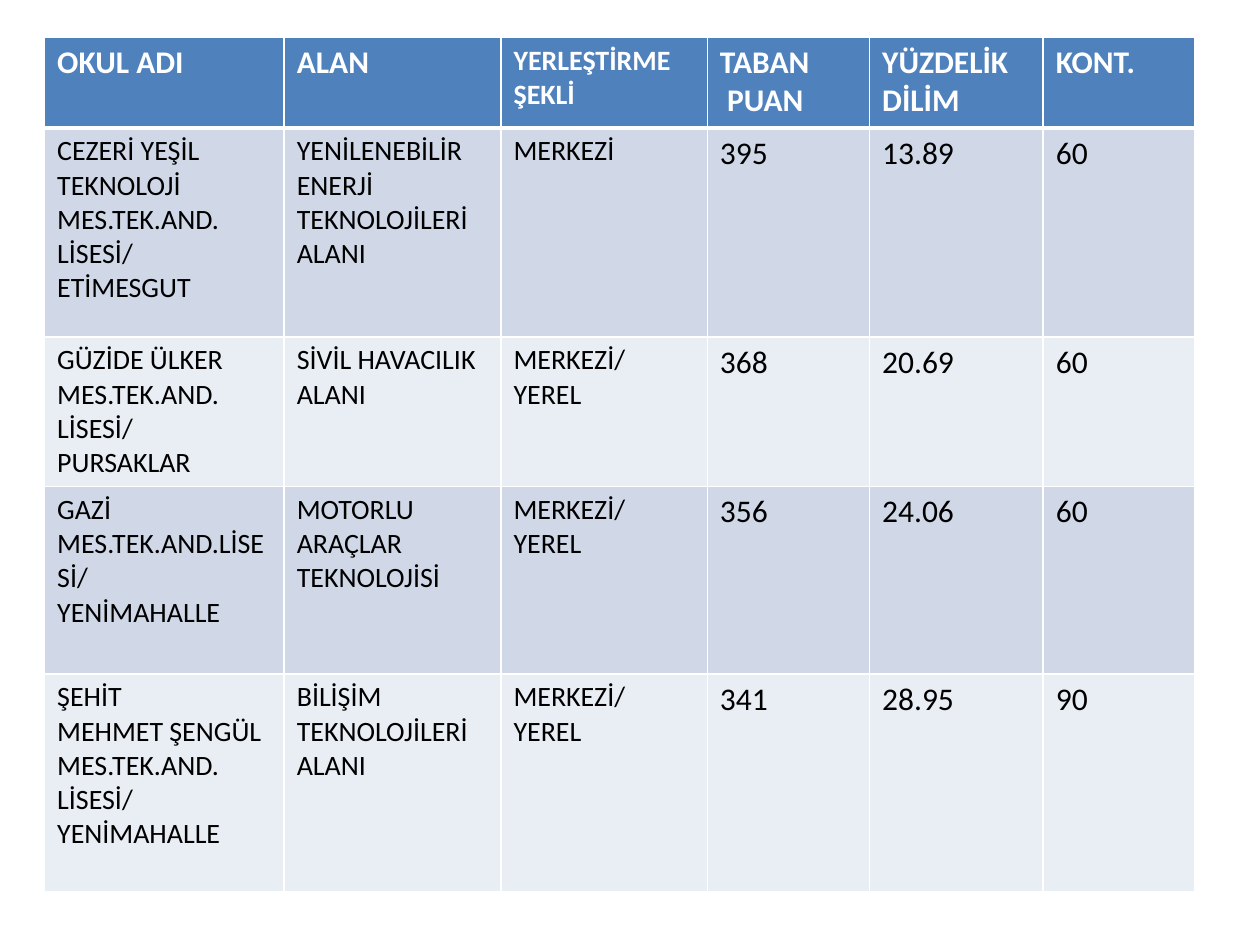
import lxml.etree
import pptx
import pptx.dml.color
import pptx.oxml.ns
import pptx.util
from pptx.util import Cm

THEME = {
    "font": "Calibri",
    "header_fill": "4F81BD",
    "band_fills": ("D0D8E8", "E9EDF4"),
    "header_text": "FFFFFF",
    "body_text": "000000",
    "border": "FFFFFF",
    "large": 18,
    "small": 16,
    "thin": 1,
    "thick": 3,
}

COL_WIDTHS = (4.83, 4.37, 4.16, 3.27, 3.5, 3.06)
ROW_HEIGHTS = (1.83, 4.21, 2.99, 3.78, 4.39)
ROWS = (
    ("OKUL ADI", "ALAN", "YERLEŞTİRME ŞEKLİ", "TABAN\n PUAN", "YÜZDELİK DİLİM", "KONT."),
    ("CEZERİ YEŞİL\nTEKNOLOJİ\nMES.TEK.AND.\nLİSESİ/\nETİMESGUT",
     "YENİLENEBİLİR\nENERJİ\nTEKNOLOJİLERİ\nALANI", "MERKEZİ", "395", "13.89", "60"),
    ("GÜZİDE ÜLKER\nMES.TEK.AND.\nLİSESİ/\nPURSAKLAR",
     "SİVİL HAVACILIK ALANI", "MERKEZİ/\nYEREL", "368", "20.69", "60"),
    ("GAZİ MES.TEK.AND.LİSESİ/\nYENİMAHALLE",
     "MOTORLU ARAÇLAR TEKNOLOJİSİ", "MERKEZİ/\nYEREL", "356", "24.06", "60"),
    ("ŞEHİT\nMEHMET ŞENGÜL MES.TEK.AND.\nLİSESİ/\nYENİMAHALLE",
     "BİLİŞİM TEKNOLOJİLERİ ALANI", "MERKEZİ/\nYEREL", "341", "28.95", "90"),
)


def rgb(value):
    return pptx.dml.color.RGBColor.from_string(value)


def set_borders(cell, widths):
    """Draw solid borders; widths maps L, R, T, B, in that order, to points."""
    qn = pptx.oxml.ns.qn
    tc_pr = cell._tc.get_or_add_tcPr()
    for i, (side, width) in enumerate(widths.items()):
        ln = lxml.etree.Element(qn(f"a:ln{side}"), w=str(pptx.util.Pt(width)))
        fill = lxml.etree.SubElement(ln, qn("a:solidFill"))
        lxml.etree.SubElement(fill, qn("a:srgbClr"), val=THEME["border"])
        tc_pr.insert(i, ln)


prs = pptx.Presentation()
prs.slide_width, prs.slide_height = Cm(25.4), Cm(19.05)
s = prs.slides.add_slide(prs.slide_layouts[6])

table = s.shapes.add_table(
    len(ROWS), len(COL_WIDTHS), Cm(0.9), Cm(0.75),
    Cm(sum(COL_WIDTHS)), Cm(sum(ROW_HEIGHTS))).table
for column, width in zip(table.columns, COL_WIDTHS):
    column.width = Cm(width)
for row, height in zip(table.rows, ROW_HEIGHTS):
    row.height = Cm(height)

for i, texts in enumerate(ROWS):
    header = i == 0
    fill = THEME["header_fill"] if header else THEME["band_fills"][(i - 1) % 2]
    color = THEME["header_text"] if header else THEME["body_text"]
    borders = dict.fromkeys("LRTB", THEME["thin"])
    if header:
        borders["B"] = THEME["thick"]
    elif i == 1:
        borders["T"] = THEME["thick"]
    for j, text in enumerate(texts):
        cell = table.cell(i, j)
        cell.text = text
        cell.fill.solid()
        cell.fill.fore_color.rgb = rgb(fill)
        set_borders(cell, borders)
        small = j == 2 or (j < 2 and not header)
        font_format = {
            "name": THEME["font"],
            "size": pptx.util.Pt(THEME["small" if small else "large"]),
            "bold": header,
        }
        for p in cell.text_frame.paragraphs:
            for r in p.runs:
                for name, value in font_format.items():
                    setattr(r.font, name, value)
                r.font.color.rgb = rgb(color)

prs.save("out.pptx")
